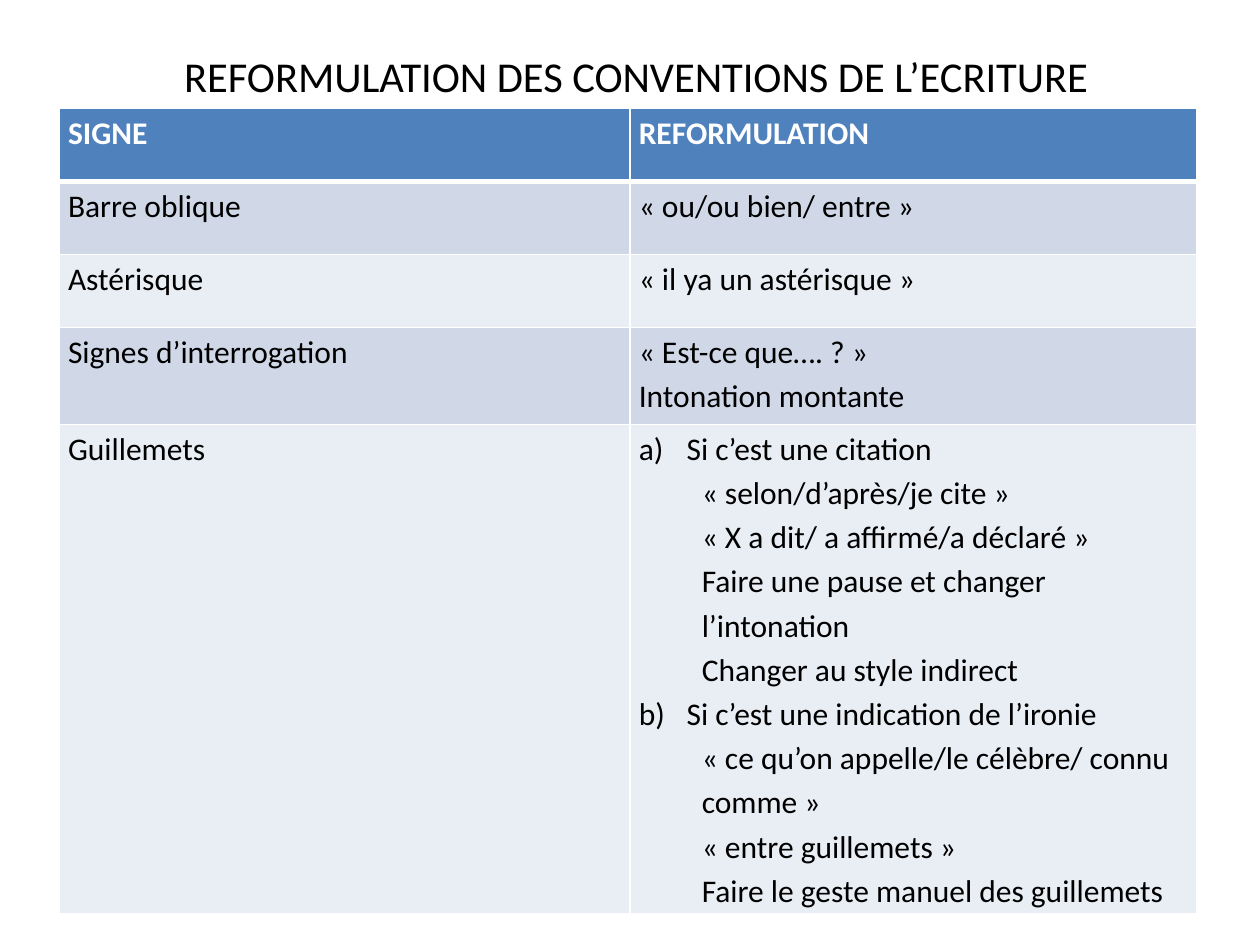
from dataclasses import dataclass

import pptx
import pptx.dml.color
import pptx.enum.text
import pptx.oxml
import pptx.oxml.ns
import pptx.util

COLOURS = {
    "header": "4F81BD",
    "dark band": "D0D8E8",
    "light band": "E9EDF4",
    "white": "FFFFFF",
    "black": "000000",
}
WIDTH, HEIGHT = 10, 7.5
COLUMN_WIDTHS = [4.53, 4.5]
ROW_HEIGHTS = [0.58, 0.58, 0.58, 0.77, 3.88]
THIN, THICK = 1, 3


@dataclass
class Line:
    text: str
    indent: float = 0
    numbered: bool = False


def item(text: str) -> Line:
    return Line(text, 0.38, True)


def detail(text: str) -> Line:
    return Line(text, 0.5)


ROWS = [
    ([Line("SIGNE")], [Line("REFORMULATION")]),
    ([Line("Barre oblique")], [Line("« ou/ou bien/ entre »")]),
    ([Line("Astérisque")], [Line("« il ya un astérisque »")]),
    (
        [Line("Signes d’interrogation")],
        [Line("« Est-ce que…. ? »"), Line("Intonation montante")],
    ),
    (
        [Line("Guillemets")],
        [
            item("Si c’est une citation"),
            detail("« selon/d’après/je cite »"),
            detail("« X a dit/ a affirmé/a déclaré »"),
            detail("Faire une pause et changer l’intonation"),
            detail("Changer au style indirect"),
            item("Si c’est une indication de l’ironie"),
            detail("« ce qu’on appelle/le célèbre/ connu comme »"),
            detail("« entre guillemets »"),
            detail("Faire le geste manuel des guillemets"),
        ],
    ),
]


def colour(name: str) -> pptx.dml.color.RGBColor:
    return pptx.dml.color.RGBColor.from_string(COLOURS[name])


def set_all(target, values: dict) -> None:
    for name, value in values.items():
        setattr(target, name, value)


def add_span(para, text: str, size: float, ink: str, bold: bool = False) -> None:
    span = para.add_run()
    span.text = text
    set_all(span.font, {"name": "Calibri", "size": pptx.util.Pt(size), "bold": bold})
    span.font.color.rgb = colour(ink)


def set_indent(para, line: Line) -> None:
    """Indent a paragraph, hanging its letter when it is numbered."""
    properties = para._p.get_or_add_pPr()
    left = pptx.util.Inches(line.indent)
    properties.set("marL", str(left))
    properties.set("indent", str(-left if line.numbered else 0))
    bullet = '<a:buAutoNum type="alphaLcParenR" %s/>' if line.numbered else "<a:buNone %s/>"
    properties.append(pptx.oxml.parse_xml(bullet % pptx.oxml.ns.nsdecls("a")))


def set_borders(cell, top: float, bottom: float) -> None:
    properties = cell._tc.get_or_add_tcPr()
    for side, points in {"L": THIN, "R": THIN, "T": top, "B": bottom}.items():
        properties.append(pptx.oxml.parse_xml(
            f'<a:ln{side} {pptx.oxml.ns.nsdecls("a")} w="{pptx.util.Pt(points)}">'
            f'<a:solidFill><a:srgbClr val="{COLOURS["white"]}"/></a:solidFill>'
            f"</a:ln{side}>"
        ))


def fill_cell(cell, lines: list[Line], row: int) -> None:
    header = row == 0
    band = "header" if header else "dark band" if row % 2 else "light band"
    side = pptx.util.Inches(0.07)
    set_all(cell, {"margin_left": side, "margin_right": side,
                   "margin_top": 0, "margin_bottom": 0})
    set_borders(cell, THICK if row == 1 else THIN, THICK if header else THIN)
    cell.fill.solid()
    cell.fill.fore_color.rgb = colour(band)
    for index, line in enumerate(lines):
        frame = cell.text_frame
        para = frame.add_paragraph() if index else frame.paragraphs[0]
        para.line_spacing = 1.15
        if line.indent:
            set_indent(para, line)
        add_span(para, line.text, 18, "white" if header else "black", header)


def add_title(page, text: str) -> None:
    box = page.shapes.add_textbox(
        *map(pptx.util.Inches, (0.55, 0.23, WIDTH * 0.9, HEIGHT * 0.125)))
    set_all(box.text_frame, {
        "word_wrap": True,
        "vertical_anchor": pptx.enum.text.MSO_ANCHOR.MIDDLE,
        "margin_top": 0,
        "margin_bottom": pptx.util.Inches(0.2),
    })
    para = box.text_frame.paragraphs[0]
    para.alignment = pptx.enum.text.PP_ALIGN.CENTER
    add_span(para, text, 24.3, "black")


def add_sign_table(page) -> None:
    table = page.shapes.add_table(
        len(ROWS), len(COLUMN_WIDTHS),
        *map(pptx.util.Inches, (0.47, 0.86, sum(COLUMN_WIDTHS), sum(ROW_HEIGHTS))),
    ).table
    for column, width in zip(table.columns, COLUMN_WIDTHS):
        column.width = pptx.util.Inches(width)
    for row, (cells, height) in enumerate(zip(ROWS, ROW_HEIGHTS)):
        table.rows[row].height = pptx.util.Inches(height)
        for column, lines in enumerate(cells):
            fill_cell(table.cell(row, column), lines, row)


def main() -> None:
    deck = pptx.Presentation()
    deck.slide_width = pptx.util.Inches(WIDTH)
    deck.slide_height = pptx.util.Inches(HEIGHT)
    page = deck.slides.add_slide(deck.slide_layouts[6])
    add_title(page, "REFORMULATION DES CONVENTIONS DE L’ECRITURE")
    add_sign_table(page)
    deck.save("out.pptx")


if __name__ == "__main__":
    main()
